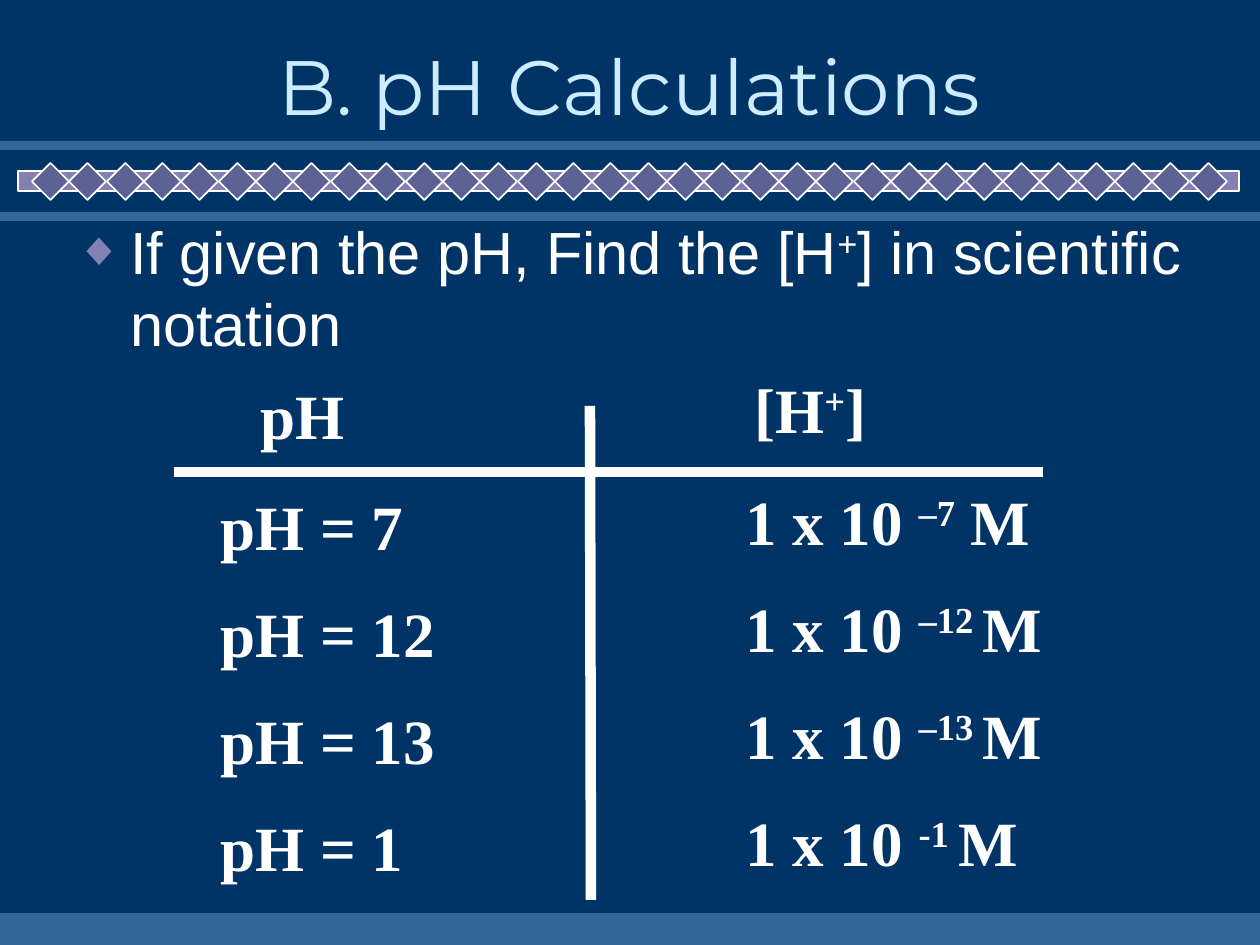
from lxml.etree import SubElement
from pptx import Presentation
from pptx.dml.color import RGBColor
from pptx.enum.shapes import MSO_CONNECTOR, MSO_SHAPE as SHAPE
from pptx.enum.text import MSO_ANCHOR as ANCHOR, PP_ALIGN as ALIGN
from pptx.oxml.ns import qn
from pptx.util import Emu, Pt

EMU_PER_PX = 914400 / 126


def px(n):
    return Emu(round(n * EMU_PER_PX))


def rgb(code):
    return RGBColor.from_string(code)


def add_xml(parent, tag, **attrs):
    return SubElement(parent, qn(tag), attrs)


def write(p, text, font="Times New Roman", size=36, color="FFFFFF", bold=False,
          shadow=False, align=ALIGN.LEFT, before=0, bullet=None):
    p.alignment = align
    pPr = p._p.get_or_add_pPr()
    if before:
        add_xml(add_xml(pPr, "a:spcBef"), "a:spcPct", val=str(before * 1000))
    if bullet:
        pPr.set("marL", str(px(55)))
        pPr.set("indent", str(-px(55)))
        add_xml(add_xml(pPr, "a:buClr"), "a:srgbClr", val=bullet)
        add_xml(pPr, "a:buSzPct", val="80000")
        add_xml(pPr, "a:buFont", typeface="Arial")
        add_xml(pPr, "a:buChar", char="◆")
    for i, part in enumerate(text.split("^")):
        r = p.add_run()
        r.text = part
        r.font.size, r.font.bold = Pt(size), bold
        r.font.color.rgb = rgb(color)
        rPr = r.font._element
        if i % 2:
            rPr.set("baseline", "30000")
        if shadow:
            effects = add_xml(rPr, "a:effectLst")
            shade = add_xml(effects, "a:outerShdw", dist=str(px(6)), dir="2700000")
            add_xml(shade, "a:srgbClr", val="000000")
        r.font.name = font


class Deck:
    """Holds the slide and its colours, and draws each kind of element."""

    band, bar, gem, white = "336699", "8381B3", "5B6192", "FFFFFF"

    def __init__(self, prs, background):
        self.s = prs.slides.add_slide(prs.slide_layouts[6])
        self.s.background.fill.solid()
        self.s.background.fill.fore_color.rgb = rgb(background)

    def shape(self, kind, x, y, w, h, fill, line=None):
        sp = self.s.shapes.add_shape(kind, px(x), px(y), px(w), px(h))
        sp.shadow.inherit = False
        sp.fill.solid()
        sp.fill.fore_color.rgb = rgb(fill)
        if line:
            sp.line.color.rgb = rgb(line)
            sp.line.width = Pt(1)
        else:
            sp.line.fill.background()

    def line(self, x1, y1, x2, y2):
        cn = self.s.shapes.add_connector(MSO_CONNECTOR.STRAIGHT, px(x1), px(y1), px(x2), px(y2))
        cn.line.color.rgb = rgb(self.white)
        cn.line.width = Pt(6)
        add_xml(cn._element.spPr, "a:effectLst")

    def text(self, x, y, w, h, lines, anchor=ANCHOR.TOP, **style):
        tf = self.s.shapes.add_textbox(px(x), px(y), px(w), px(h)).text_frame
        tf.word_wrap = True
        tf.vertical_anchor = anchor
        for i, line in enumerate(lines):
            write(tf.add_paragraph() if i else tf.paragraphs[0], line, **style)


def main():
    prs = Presentation()
    prs.slide_width, prs.slide_height = px(1260), px(945)
    deck = Deck(prs, "003366")

    for y, h in ((141, 9), (212, 9), (913, 32)):
        deck.shape(SHAPE.RECTANGLE, 0, y, 1260, h, deck.band)
    deck.shape(SHAPE.RECTANGLE, 18, 171, 1221, 20, deck.bar, deck.white)
    for i in range(32):
        deck.shape(SHAPE.DIAMOND, 32 + round(i * 37.35), 163, 37, 37, deck.gem, deck.white)

    deck.text(94, 32, 1071, 105, ["B. pH Calculations"], anchor=ANCHOR.MIDDLE,
              font="Montserrat", size=44, color="CCECFF", shadow=True, align=ALIGN.CENTER)
    deck.text(63, 209, 1166, 163, ["If given the pH, Find the [H^+^] in scientific notation"],
              font="Arial", size=34, before=20, bullet=deck.bar)

    deck.line(174, 472, 1043, 472)
    deck.line(590, 406, 591, 900)
    cells = {"bold": True, "before": 50}
    deck.text(248, 370, 163, 88, ["pH"], **cells)
    deck.text(742, 364, 163, 88, ["[H^+^]"], **cells)
    deck.text(208, 481, 341, 428, [f"pH = {n}" for n in (7, 12, 13, 1)], **cells)
    powers = ("–7^ M", "–12 ^M", "–13 ^M", "-1 ^M")
    deck.text(733, 476, 379, 428, [f"1 x 10 ^{power}" for power in powers], **cells)

    prs.save("out.pptx")


if __name__ == "__main__":
    main()
